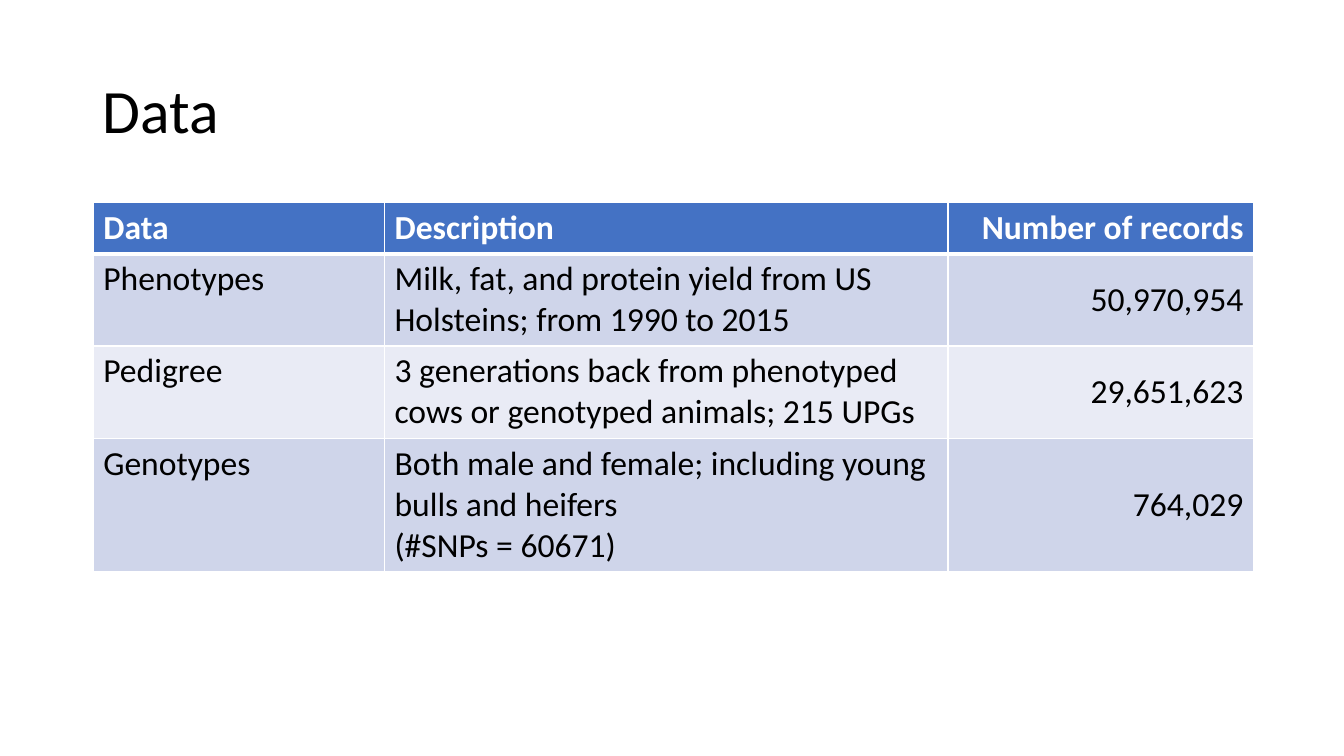
from lxml import etree
from pptx import Presentation
from pptx import util as u
from pptx.dml.color import RGBColor
from pptx.enum import text
from pptx.oxml import ns

COLORS = {"white": "FFFFFF", "black": "000000", "head": "4472C4",
          "dark": "CFD5EA", "light": "E9EBF5"}
ROWS = [
    ("Data", "Description", "Number of records"),
    ("Phenotypes",
     "Milk, fat, and protein yield from US Holsteins; from 1990 to 2015",
     "50,970,954"),
    ("Pedigree",
     "3 generations back from phenotyped cows or genotyped animals; 215 UPGs",
     "29,651,623"),
    ("Genotypes",
     "Both male and female; including young bulls and heifers\n(#SNPs = 60671)",
     "764,029"),
]
WIDTHS = (7.34, 14.2, 7.7)
HEIGHTS = (1.27, 2.32, 2.32, 3.35)


class Deck:
    def __init__(self, font):
        self.font = font
        self.prs = Presentation()
        self.prs.slide_width = u.Cm(33.87)
        self.prs.slide_height = u.Cm(19.05)
        self.slide = self.prs.slides.add_slide(self.prs.slide_layouts[5])

    def label(self, para, words, color, size, bold=False):
        para.text = words
        style = {"name": self.font, "size": u.Pt(size), "bold": bold}
        for run in para.runs:
            for key, value in style.items():
                setattr(run.font, key, value)
            run.font.color.rgb = RGBColor.from_string(COLORS[color])

    def title(self, words, left, top, width, height):
        shape = self.slide.shapes.title
        box = {"left": left, "top": top, "width": width, "height": height}
        for key, value in box.items():
            setattr(shape, key, u.Cm(value))
        frame = shape.text_frame
        frame.vertical_anchor = text.MSO_ANCHOR.MIDDLE
        para = frame.paragraphs[0]
        para.alignment = text.PP_ALIGN.LEFT
        para.line_spacing = 0.9
        self.label(para, words, "black", 44)

    def border(self, cell, widths):
        # Edges must come before the fill in the cell properties
        props = cell._tc.get_or_add_tcPr()
        for spot, (side, width) in enumerate(widths.items()):
            line = etree.Element(ns.qn(f"a:ln{side}"), w=str(u.Pt(width)))
            fill = etree.SubElement(line, ns.qn("a:solidFill"))
            etree.SubElement(fill, ns.qn("a:srgbClr"), val=COLORS["white"])
            props.insert(spot, line)

    def cell(self, cell, words, row, last):
        head = row == 0
        fill = "head" if head else ("light", "dark")[row % 2]
        cell.fill.solid()
        cell.fill.fore_color.rgb = RGBColor.from_string(COLORS[fill])
        para = cell.text_frame.paragraphs[0]
        self.label(para, words, "white" if head else "black", 24, head)
        if last:
            para.alignment = text.PP_ALIGN.RIGHT
            if not head:
                cell.vertical_anchor = text.MSO_ANCHOR.MIDDLE
        self.border(cell, {"L": 1, "R": 1, "T": 3 if row == 1 else 1,
                           "B": 3 if head else 1})

    def table(self, rows, left, top, widths, heights):
        size = (left, top, sum(widths), sum(heights))
        table = self.slide.shapes.add_table(
            len(rows), len(widths), *map(u.Cm, size)).table
        for col, width in zip(table.columns, widths):
            col.width = u.Cm(width)
        for row, height in zip(table.rows, heights):
            row.height = u.Cm(height)
        for r, line in enumerate(rows):
            for c, words in enumerate(line):
                self.cell(table.cell(r, c), words, r, c == len(widths) - 1)


def main():
    deck = Deck("Calibri")
    # Heading
    deck.title("Data", 2.33, 1.01, 29.21, 3.68)
    # Table of data sets
    deck.table(ROWS, 2.35, 5.11, WIDTHS, HEIGHTS)
    deck.prs.save("out.pptx")


if __name__ == "__main__":
    main()
